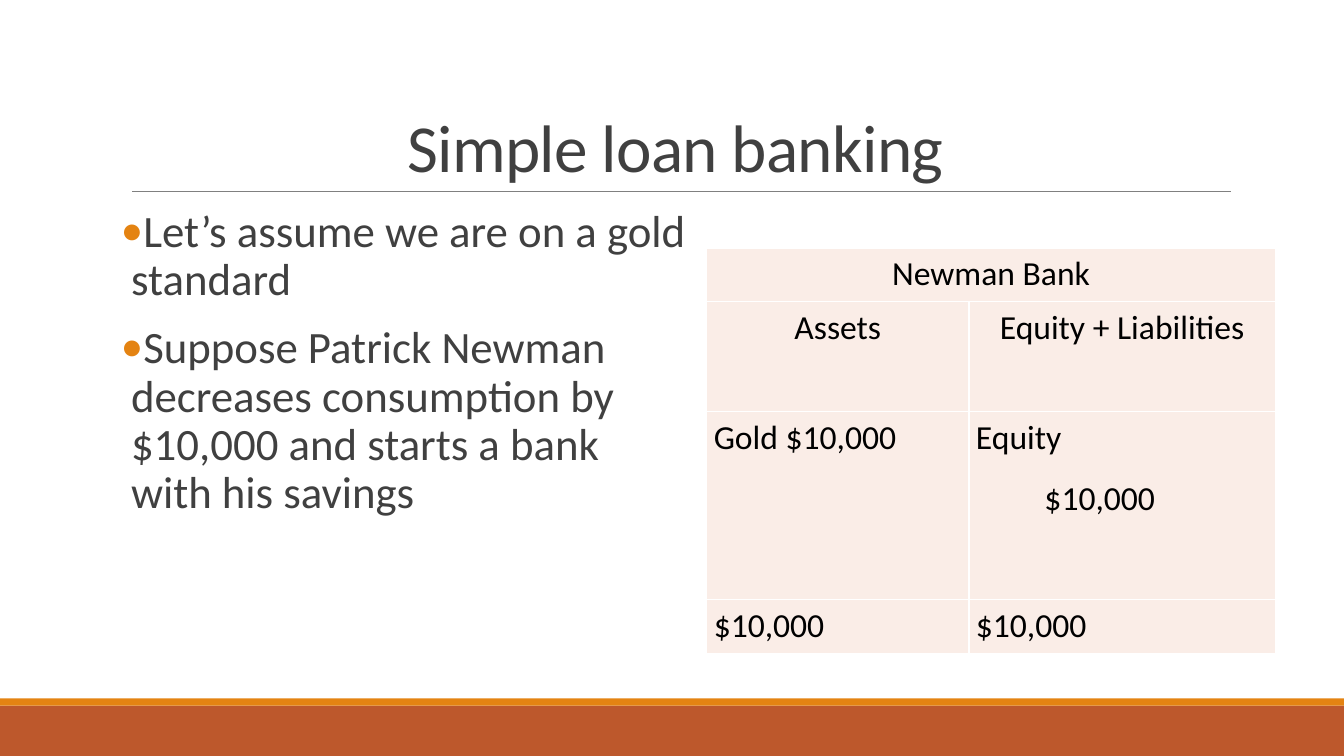
from dataclasses import dataclass

from lxml.etree import SubElement
from pptx import Presentation
from pptx.dml.color import RGBColor
from pptx.enum.shapes import MSO_CONNECTOR, MSO_SHAPE
from pptx.enum.text import MSO_ANCHOR, PP_ALIGN
from pptx.oxml import parse_xml
from pptx.oxml.ns import nsdecls, qn
from pptx.util import Inches, Pt


@dataclass(frozen=True)
class Theme:
    font: str = "Calibri"
    ink: str = "404040"
    table_ink: str = "000000"
    rule: str = "808080"
    accent: str = "E48312"
    footer: str = "BD582C"
    cell: str = "FAEDE7"
    border: str = "FFFFFF"
    title_size: int = 48
    body_size: int = 32
    table_size: int = 24


def write_paragraph(para, text, *, font, size, color, align=PP_ALIGN.LEFT,
                    line=1.0, before=0, after=0, spacing=None,
                    margin=0, indent=0, bullet_color=None):
    """Fill one paragraph; margin and indent are inches, the rest points."""
    para.alignment = align
    para.line_spacing = line
    para.space_before, para.space_after = Pt(before), Pt(after)
    properties = para._p.get_or_add_pPr()
    properties.set("marL", str(Inches(margin)))
    properties.set("indent", str(Inches(indent)))
    if bullet_color:
        color_holder = SubElement(properties, qn("a:buClr"))
        SubElement(color_holder, qn("a:srgbClr")).set("val", bullet_color)
        SubElement(properties, qn("a:buFont")).set("typeface", font)
        SubElement(properties, qn("a:buChar")).set("char", "•")
    span = para.add_run()
    span.text = text
    span.font.name = font
    span.font.size = Pt(size)
    span.font.color.rgb = RGBColor.from_string(color)
    if spacing is not None:
        span._r.get_or_add_rPr().set("spc", str(int(spacing * 100)))


def write_paragraphs(frame, texts, **style):
    """Write texts; an item may be a (text, extra style) pair."""
    for number, item in enumerate(texts):
        text, extra = item if isinstance(item, tuple) else (item, {})
        para = frame.add_paragraph() if number else frame.paragraphs[0]
        write_paragraph(para, text, **{**style, **extra})


class SlideBuilder:
    def __init__(self, page, theme):
        self.page = page
        self.theme = theme

    def bar(self, top, height, color):
        shape = self.page.shapes.add_shape(
            MSO_SHAPE.RECTANGLE, 0, Inches(top), Inches(13.33), Inches(height))
        shape.shadow.inherit = False
        shape.fill.solid()
        shape.fill.fore_color.rgb = RGBColor.from_string(color)
        shape.line.fill.background()

    def rule(self, left, right, top):
        line = self.page.shapes.add_connector(
            MSO_CONNECTOR.STRAIGHT, Inches(left), Inches(top), Inches(right), Inches(top))
        line.line.color.rgb = RGBColor.from_string(self.theme.rule)
        line.line.width = Pt(0.5)
        SubElement(line._element.spPr, qn("a:effectLst"))

    def text(self, area, texts, *, side_inset=0.0, anchor=MSO_ANCHOR.TOP, **style):
        box = self.page.shapes.add_textbox(*map(Inches, area))
        frame = box.text_frame
        frame.word_wrap = True
        frame.vertical_anchor = anchor
        frame.margin_left = frame.margin_right = Inches(side_inset)
        frame.margin_top = frame.margin_bottom = Inches(0.05)
        write_paragraphs(frame, texts, font=self.theme.font, color=self.theme.ink, **style)

    def cell(self, cell, texts, **style):
        cell.margin_left = cell.margin_right = Inches(0.07)
        cell.margin_top = cell.margin_bottom = 0
        cell.fill.solid()
        cell.fill.fore_color.rgb = RGBColor.from_string(self.theme.cell)
        for position, side in enumerate(("lnL", "lnR", "lnT", "lnB")):
            border = parse_xml(
                f'<a:{side} {nsdecls("a")} w="{Pt(1)}"><a:solidFill>'
                f'<a:srgbClr val="{self.theme.border}"/></a:solidFill></a:{side}>')
            cell._tc.get_or_add_tcPr().insert(position, border)
        if texts:
            write_paragraphs(cell.text_frame, texts, font=self.theme.font, line=1.15,
                             size=self.theme.table_size, color=self.theme.table_ink, **style)

    def balance_sheet(self, left, top, widths, heights, rows, header_rows):
        """Draw the table; its first row is merged and header rows are centred."""
        table = self.page.shapes.add_table(
            len(rows), len(widths), Inches(left), Inches(top),
            Inches(sum(widths)), Inches(sum(heights))).table
        table.first_row = table.horz_banding = False
        for column, width in zip(table.columns, widths):
            column.width = Inches(width)
        for row, height in zip(table.rows, heights):
            row.height = Inches(height)
        table.cell(0, 0).merge(table.cell(0, len(widths) - 1))
        for r, row in enumerate(rows):
            align = PP_ALIGN.CENTER if r < header_rows else PP_ALIGN.JUSTIFY
            for c, texts in enumerate(row):
                self.cell(table.cell(r, c), texts, align=align, after=0 if r == 1 else 10)


def main():
    theme = Theme()
    deck = Presentation()
    deck.slide_width, deck.slide_height = Inches(13.33), Inches(7.5)
    builder = SlideBuilder(deck.slides.add_slide(deck.slide_layouts[6]), theme)

    builder.bar(7, 0.5, theme.footer)
    builder.bar(6.93, 0.07, theme.accent)
    builder.rule(1.31, 12.21, 1.9)
    builder.text((1.2, 0.31, 11, 1.59), ["Simple loan banking"], side_inset=0.1,
                 anchor=MSO_ANCHOR.BOTTOM, size=theme.title_size,
                 align=PP_ALIGN.CENTER, line=0.85, spacing=-0.5)
    builder.text((1.2, 2.02, 5.64, 4.46), [
        "Let’s assume we are on a gold standard",
        "Suppose Patrick Newman decreases consumption by $10,000 "
        "and starts a bank with his savings",
    ], size=theme.body_size, line=0.9, before=12, after=2,
        margin=0.1, indent=-0.1, bullet_color=theme.accent)

    amount = "$10,000"
    builder.balance_sheet(7.01, 2.46, (2.6, 3.04), (0.53, 1.09, 1.87, 0.53), [
        (["Newman Bank"], []),
        (["Assets"], ["Equity + Liabilities"]),
        ([f"Gold {amount}"], ["Equity", (amount, {"margin": 0.68})]),
        ([amount], [amount]),
    ], header_rows=2)
    deck.save("out.pptx")


if __name__ == "__main__":
    main()
